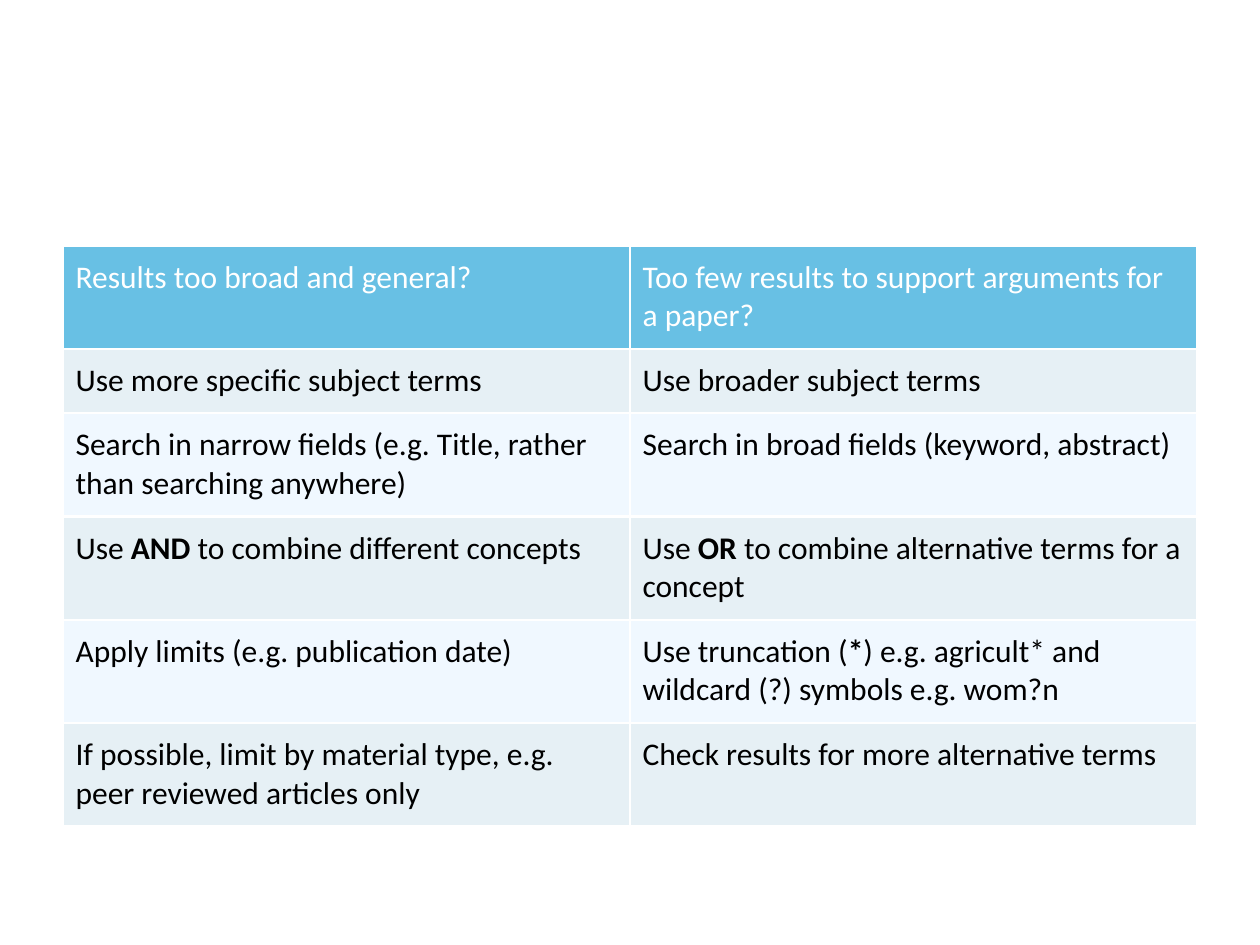
from lxml import etree
from pptx import Presentation
from pptx.dml.color import RGBColor
from pptx.oxml.ns import qn
from pptx.util import Inches, Pt

WHITE = RGBColor(0xFF, 0xFF, 0xFF)
BLACK = RGBColor(0, 0, 0)
HEADER_BLUE = RGBColor(0x68, 0xC0, 0xE4)
BANDS = [RGBColor(0xE6, 0xF0, 0xF5), RGBColor(0xF0, 0xF8, 0xFF)]

# Each cell is a tuple of pieces; every second piece is bold
ROWS = [
    (("Results too broad and general?",),
     ("Too few results to support arguments for a paper?",)),
    (("Use more specific subject terms",),
     ("Use broader subject terms",)),
    (("Search in narrow fields (e.g. Title, rather than searching anywhere)",),
     ("Search in broad fields (keyword, abstract)",)),
    (("Use ", "AND", " to combine different concepts"),
     ("Use ", "OR", " to combine alternative terms for a concept")),
    (("Apply limits (e.g. publication date)",),
     ("Use truncation (", "*", ") e.g. agricult* and wildcard (?) symbols e.g. wom?n")),
    (("If possible, limit by material type, e.g. peer reviewed articles only",),
     ("Check results for more alternative terms",)),
]
ONE_LINE, TWO_LINES = 0.51, 0.82
HEIGHTS = [TWO_LINES, ONE_LINE] + [TWO_LINES] * 4
COL_WIDTH = 4.5


def set_border(cell, side):
    ln = etree.SubElement(cell._tc.get_or_add_tcPr(), qn("a:" + side), w=str(Pt(1.5)))
    fill = etree.SubElement(ln, qn("a:solidFill"))
    etree.SubElement(fill, qn("a:srgbClr"), val=str(WHITE))


def fill_cell(cell, pieces, background, color):
    # Borders come before the fill in the cell properties
    for side in ("lnL", "lnR", "lnT", "lnB"):
        set_border(cell, side)
    cell.fill.solid()
    cell.fill.fore_color.rgb = background
    cell.margin_left = cell.margin_right = Inches(0.1)
    cell.margin_top = cell.margin_bottom = Inches(0.1)
    p = cell.text_frame.paragraphs[0]
    for i, piece in enumerate(pieces):
        r = p.add_run()
        r.text = piece
        r.font.name = "Calibri"
        r.font.size = Pt(18)
        r.font.bold = i % 2 == 1
        r.font.color.rgb = color


prs = Presentation()
prs.slide_width, prs.slide_height = Inches(10), Inches(7.5)
s = prs.slides.add_slide(prs.slide_layouts[6])

# Search advice table
table = s.shapes.add_table(len(ROWS), 2, Inches(0.5), Inches(1.95),
                           Inches(2 * COL_WIDTH), Inches(sum(HEIGHTS))).table
for col in table.columns:
    col.width = Inches(COL_WIDTH)
for i, (row, height) in enumerate(zip(ROWS, HEIGHTS)):
    table.rows[i].height = Inches(height)
    background = BANDS[(i - 1) % 2] if i else HEADER_BLUE
    for j, pieces in enumerate(row):
        fill_cell(table.cell(i, j), pieces, background, BLACK if i else WHITE)

prs.save("out.pptx")
